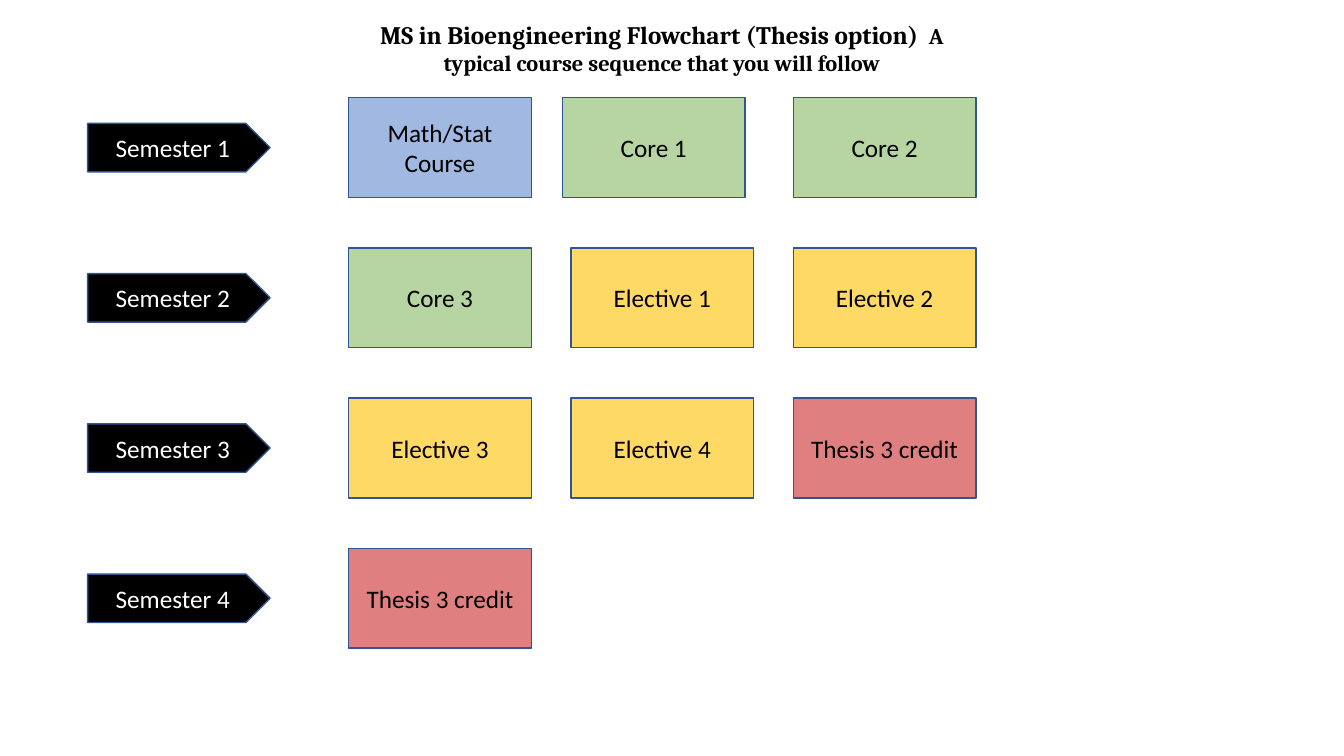
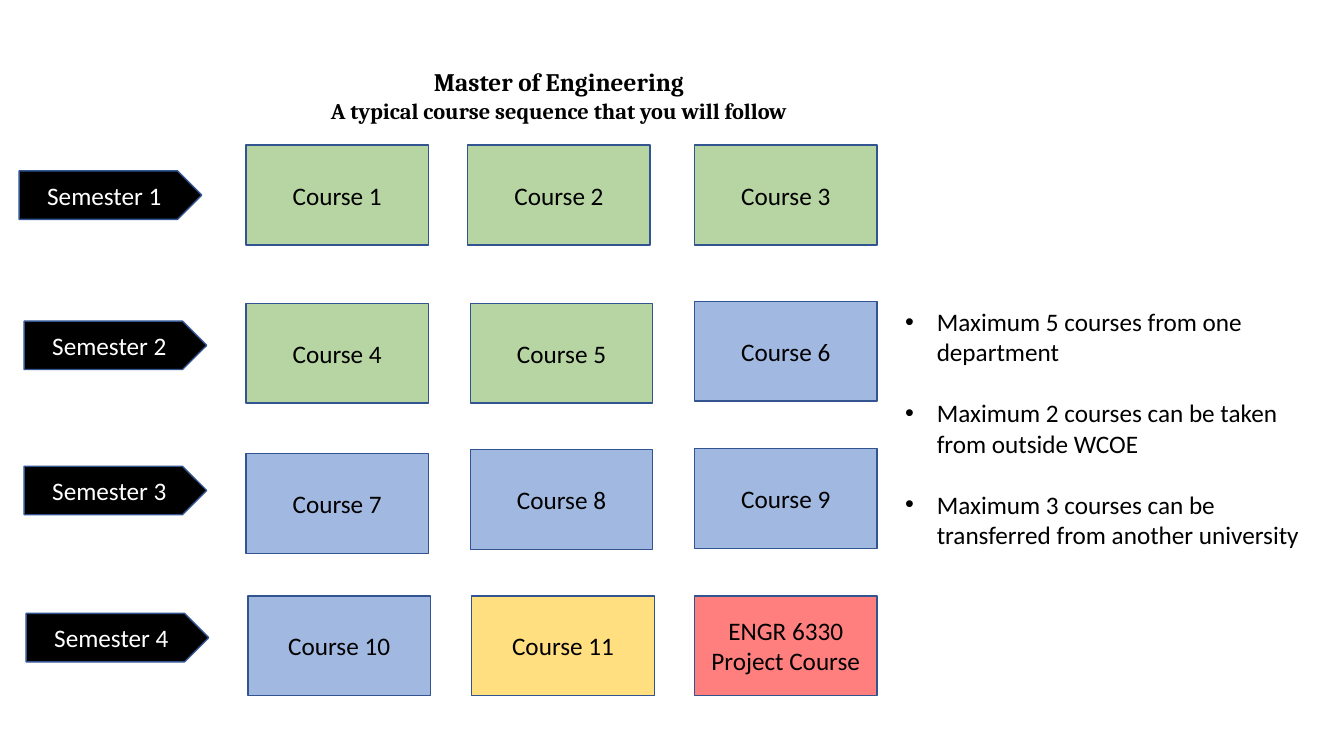
"""Build two course-sequence flowcharts for graduate engineering programmes."""
from dataclasses import dataclass

from lxml import etree
from pptx import Presentation
from pptx.dml.color import RGBColor
from pptx.enum.shapes import MSO_SHAPE
from pptx.enum.text import MSO_ANCHOR, MSO_AUTO_SIZE, PP_ALIGN
from pptx.oxml.ns import qn
from pptx.util import Pt

RECTANGLE, PENTAGON = MSO_SHAPE.RECTANGLE, MSO_SHAPE.PENTAGON
TOP, MIDDLE = MSO_ANCHOR.TOP, MSO_ANCHOR.MIDDLE
LEFT, CENTER = PP_ALIGN.LEFT, PP_ALIGN.CENTER
NO_AUTOFIT = MSO_AUTO_SIZE.NONE

BLACK, WHITE, OUTLINE = "000000", "FFFFFF", "325491"
BODY_FONT, TITLE_FONT = "Calibri", "Cambria"
TEXT_SIZE, SUBTITLE_SIZE = 18, 16
BOX_WIDTH, BOX_HEIGHT, TAG_HEIGHT = 130.4, 71.3, 34.6
ROW_PITCH = 107.3
BULLET_INDENT, BULLET_GAP = 22.5, 22
TITLE_LAYOUT, CONTENT_LAYOUT = 5, 1


@dataclass(frozen=True)
class Fill:
    color: str
    opacity: int = 100


BLUE, GREEN = Fill("4472C4", 50), Fill("70AD47", 50)
YELLOW, AMBER = Fill("FFD966"), Fill("FFC000", 50)
CRIMSON, RED = Fill("C00000", 50), Fill("FF0000", 50)
TAG_FILL = Fill(BLACK)


@dataclass(frozen=True)
class Box:
    text: str
    fill: Fill
    shift_x: float = 0
    shift_y: float = 0


@dataclass(frozen=True)
class Semester:
    boxes: tuple[Box, ...]
    shift_x: float = 0
    shift_y: float = 0


@dataclass(frozen=True)
class Area:
    left: float
    top: float
    width: float
    height: float


@dataclass(frozen=True)
class Flowchart:
    title: tuple[tuple[tuple[str, int], ...], ...]
    title_area: Area
    tag_left: float
    grid_left: float
    grid_top: float
    column_pitch: float
    semesters: tuple[Semester, ...]
    notes: tuple[str, ...] = ()


NOTES_AREA = Area(639.4, 215.3, 303.1, 203.8)

THESIS = Flowchart(
    title=((("MS in Bioengineering Flowchart (Thesis option) ", TEXT_SIZE),
            (" A typical course sequence that you will follow", SUBTITLE_SIZE)),),
    title_area=Area(261.4, 10.1, 422.6, 48.2),
    tag_left=62.6, grid_left=249.1, grid_top=69.8, column_pitch=158.8,
    semesters=(
        Semester((Box("Math/Stat Course", BLUE), Box("Core 1", GREEN, -6.1),
                  Box("Core 2", GREEN))),
        Semester((Box("Core 3", GREEN), Box("Elective 1", YELLOW),
                  Box("Elective 2", YELLOW))),
        Semester((Box("Elective 3", YELLOW), Box("Elective 4", YELLOW),
                  Box("Thesis 3 credit", CRIMSON))),
        Semester((Box("Thesis 3 credit", CRIMSON),)),
    ),
)

MASTER_OF_ENGINEERING = Flowchart(
    title=((("Master of Engineering", TEXT_SIZE),),
           (("A typical course sequence that you will follow", SUBTITLE_SIZE),)),
    title_area=Area(172.1, 43.9, 454.3, 48.2),
    tag_left=13.7, grid_left=175.7, grid_top=103.7, column_pitch=160.2,
    semesters=(
        Semester((Box("Course 1", GREEN), Box("Course 2", GREEN, -1.8),
                  Box("Course 3", GREEN))),
        Semester((Box("Course 4", GREEN, 0, 5.7), Box("Course 5", GREEN, 0, 5.7),
                  Box("Course 6", BLUE, 0, 4.3)), 3.6),
        Semester((Box("Course 7", BLUE, 0, 5.7), Box("Course 8", BLUE, 0, 2.8),
                  Box("Course 9", BLUE, 0, 2.1)), 3.6, -3.6),
        Semester((Box("Course 10", BLUE, 1.4), Box("Course 11", AMBER, 1.1),
                  Box("ENGR 6330 Project Course", RED)), 5, -5.8),
    ),
    notes=("Maximum 5 courses from one department",
           "Maximum 2 courses can be taken from outside WCOE",
           "Maximum 3 courses can be transferred from another university"),
)


def set_color(color_format, color: str) -> None:
    """Set a colour format to a hex colour."""
    color_format.rgb = RGBColor.from_string(color)


def set_font(run, name: str, size: float, color: str, bold: bool = False) -> None:
    """Format one run of text."""
    run.font.name = name
    run.font.size = Pt(size)
    run.font.bold = bold
    set_color(run.font.color, color)


def place(shape, area: Area) -> None:
    """Move and size a placeholder."""
    shape.left, shape.top = Pt(area.left), Pt(area.top)
    shape.width, shape.height = Pt(area.width), Pt(area.height)
    text_frame = shape.text_frame
    text_frame.word_wrap = True
    text_frame.auto_size = NO_AUTOFIT
    text_frame.vertical_anchor = TOP


def add_block(slide, kind, area: Area, text: str, fill: Fill, text_color: str) -> None:
    """Draw an outlined shape with centred text."""
    shape = slide.shapes.add_shape(
        kind, Pt(area.left), Pt(area.top), Pt(area.width), Pt(area.height))
    shape.shadow.inherit = False
    shape.fill.solid()
    set_color(shape.fill.fore_color, fill.color)
    if fill.opacity < 100:
        color_element = next(shape.fill._xPr.iter(qn("a:srgbClr")))
        alpha = etree.SubElement(color_element, qn("a:alpha"))
        alpha.set("val", str(fill.opacity * 1000))
    set_color(shape.line.color, OUTLINE)
    shape.line.width = Pt(1)
    text_frame = shape.text_frame
    text_frame.text = text
    text_frame.word_wrap = True
    text_frame.vertical_anchor = MIDDLE
    paragraph = text_frame.paragraphs[0]
    paragraph.alignment = CENTER
    set_font(paragraph.runs[0], BODY_FONT, TEXT_SIZE, text_color)


def fill_title(slide, chart: Flowchart) -> None:
    """Write the heading into the title placeholder."""
    title = slide.shapes.title
    place(title, chart.title_area)
    for index, pieces in enumerate(chart.title):
        text_frame = title.text_frame
        paragraph = text_frame.add_paragraph() if index else text_frame.paragraphs[0]
        paragraph.alignment = CENTER
        for text, size in pieces:
            run = paragraph.add_run()
            run.text = text
            set_font(run, TITLE_FONT, size, BLACK, bold=True)


def fill_notes(slide, notes: tuple[str, ...]) -> None:
    """Write the course limits into the body placeholder."""
    body = slide.placeholders[1]
    place(body, NOTES_AREA)
    body.text_frame.text = "\n".join(notes)
    for index, paragraph in enumerate(body.text_frame.paragraphs):
        paragraph.alignment = LEFT
        paragraph.space_before = Pt(BULLET_GAP if index else 0)
        properties = paragraph._p.get_or_add_pPr()
        properties.set("marL", str(Pt(BULLET_INDENT)))
        properties.set("indent", str(-Pt(BULLET_INDENT)))
        set_font(paragraph.runs[0], BODY_FONT, TEXT_SIZE, BLACK)


def add_flowchart(presentation, chart: Flowchart) -> None:
    """Add one slide with a row of courses for each semester."""
    layout = CONTENT_LAYOUT if chart.notes else TITLE_LAYOUT
    slide = presentation.slides.add_slide(presentation.slide_layouts[layout])
    fill_title(slide, chart)
    for row, semester in enumerate(chart.semesters):
        row_top = chart.grid_top + row * ROW_PITCH
        tag_top = row_top + (BOX_HEIGHT - TAG_HEIGHT) / 2 + semester.shift_y
        tag_area = Area(chart.tag_left + semester.shift_x, tag_top,
                        BOX_WIDTH, TAG_HEIGHT)
        add_block(slide, PENTAGON, tag_area, f"Semester {row + 1}", TAG_FILL, WHITE)
        for column, box in enumerate(semester.boxes):
            left = chart.grid_left + column * chart.column_pitch + box.shift_x
            box_area = Area(left, row_top + box.shift_y, BOX_WIDTH, BOX_HEIGHT)
            add_block(slide, RECTANGLE, box_area, box.text, box.fill, BLACK)
    if chart.notes:
        fill_notes(slide, chart.notes)


def main() -> None:
    """Build and save the presentation."""
    presentation = Presentation()
    presentation.slide_width, presentation.slide_height = Pt(960), Pt(540)
    for chart in (THESIS, MASTER_OF_ENGINEERING):
        add_flowchart(presentation, chart)
    presentation.save("out.pptx")


if __name__ == "__main__":
    main()
